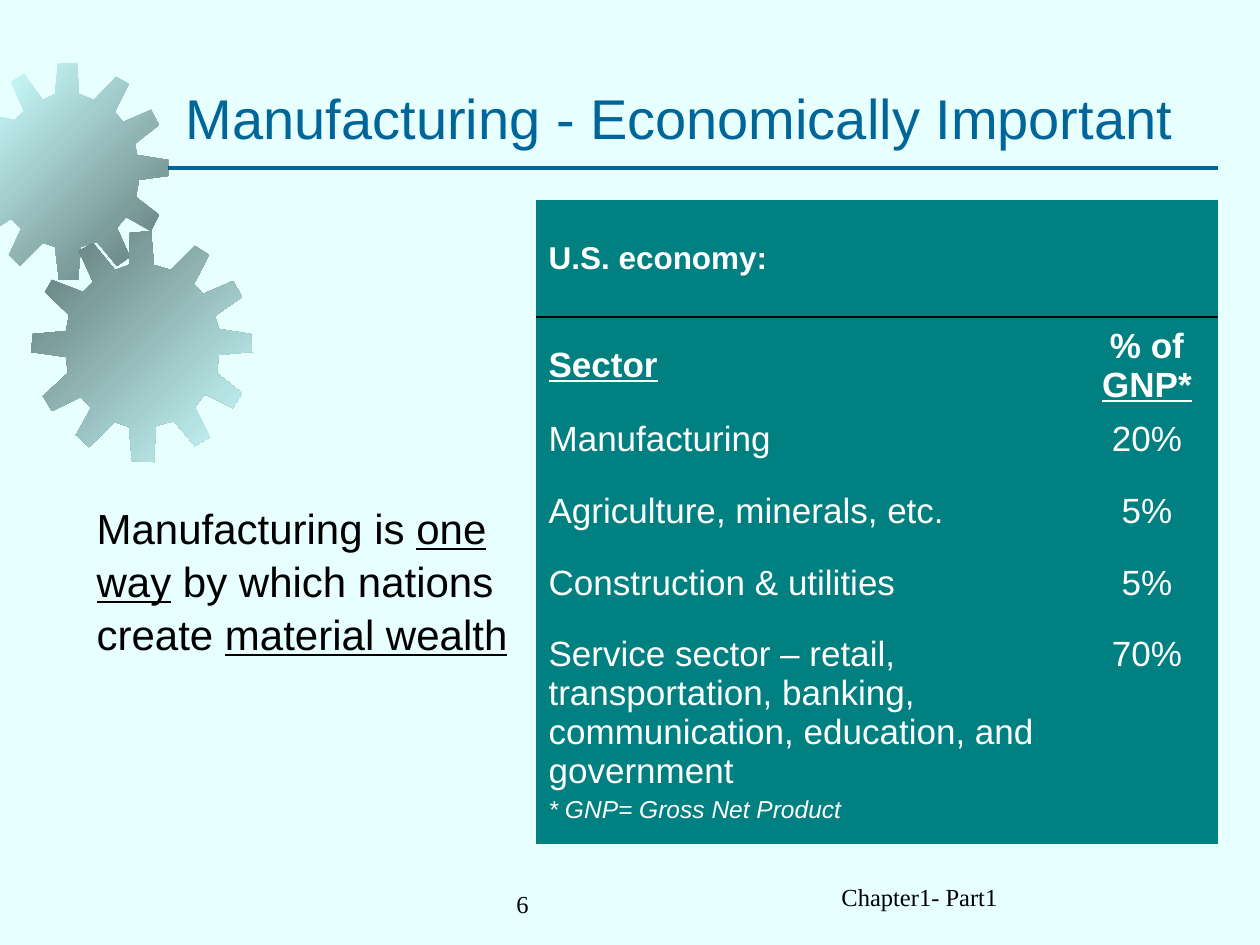
from lxml.etree import SubElement
from pptx import Presentation
from pptx.dml.color import RGBColor
from pptx.enum.shapes import MSO_CONNECTOR
from pptx.enum.text import MSO_ANCHOR, PP_ALIGN
from pptx.oxml import parse_xml
from pptx.oxml.ns import nsdecls, qn
from pptx.util import Emu, Pt

EMU_PER_PX = 914400 / 126
BLUE, TEAL, BLACK, WHITE = "006699", "008080", "000000", "FFFFFF"
GEAR_LIGHT, GEAR_DARK = "CCFFFF", "5E7676"
NO_STYLE_NO_GRID = "{2D5ABB26-0587-4C30-8999-92F81FD0307C}"

UPPER_GEAR = [
    (94, 37), (79, 31), (77, 0), (58, 1), (55, 31), (43, 37), (24, 11), (11, 19),
    (24, 48), (15, 57), (0, 54), (0, 163), (11, 156), (21, 166), (9, 192), (20, 203),
    (43, 180), (55, 184), (59, 217), (78, 217), (81, 184), (97, 179), (117, 203),
    (130, 194), (117, 165), (126, 154), (151, 168), (159, 152), (136, 134), (139, 117),
    (168, 113), (168, 97), (137, 92), (135, 81), (159, 62), (151, 47), (123, 59),
    (115, 49), (129, 21), (116, 14),
]
LOWER_GEAR = [
    (140, 39), (123, 34), (120, 0), (99, 2), (98, 34), (84, 39), (62, 12), (48, 20),
    (62, 51), (52, 61), (21, 49), (14, 61), (38, 84), (35, 100), (2, 103), (0, 121),
    (35, 126), (37, 142), (12, 165), (21, 180), (50, 166), (60, 177), (45, 204),
    (58, 216), (84, 191), (98, 196), (101, 230), (123, 231), (125, 195), (143, 190),
    (164, 215), (179, 206), (164, 176), (174, 163), (202, 177), (211, 162), (186, 142),
    (188, 124), (221, 121), (220, 103), (188, 98), (184, 85), (211, 66), (202, 50),
    (172, 63), (163, 53), (178, 24), (164, 15),
]
SECTORS = [
    ("Manufacturing", "20%"),
    ("Agriculture, minerals, etc.", "5%"),
    ("Construction & utilities", "5%"),
    ("Service sector – retail, transportation, banking, communication, "
     "education, and government", "70%"),
]


def px(length):
    return Emu(round(length * EMU_PER_PX))


def color(hex_string):
    return RGBColor.from_string(hex_string)


def add_run(paragraph, text, size, hex_color, name="Arial", bold=None, italic=None,
            underline=None):
    run = paragraph.add_run()
    run.text = text
    font = run.font
    font.size, font.name = Pt(size), name
    font.bold, font.italic, font.underline = bold, italic, underline
    font.color.rgb = color(hex_color)


def place(shape, left, top, width, height):
    shape.left, shape.top = px(left), px(top)
    shape.width, shape.height = px(width), px(height)


def add_gear(slide, left, top, points, start_color, end_color):
    builder = slide.shapes.build_freeform(*points[0], scale=EMU_PER_PX)
    builder.add_line_segments(points[1:], close=True)
    gear = builder.convert_to_shape(px(left), px(top))
    gear.shadow.inherit = False
    gear.line.fill.background()
    gear.fill.gradient()
    gear.fill.gradient_angle = 315
    for stop, hex_color in zip(gear.fill.gradient_stops, (start_color, end_color)):
        stop.color.rgb = color(hex_color)


def add_rule(slide, left, top, width):
    rule = slide.shapes.add_connector(
        MSO_CONNECTOR.STRAIGHT, px(left), px(top), px(left + width), px(top))
    rule.line.color.rgb = color(BLUE)
    rule.line.width = Pt(2)
    SubElement(rule._element.spPr, qn("a:effectLst"))


def fill_title(slide, left, top, width, height):
    title = slide.shapes.title
    place(title, left, top, width, height)
    title.text_frame.vertical_anchor = MSO_ANCHOR.BOTTOM
    paragraph = title.text_frame.paragraphs[0]
    paragraph.alignment = PP_ALIGN.CENTER
    add_run(paragraph, "Manufacturing - Economically Important ", 32, BLUE)


def fill_body(slide, left, top, width, height):
    body = slide.placeholders[1]
    place(body, left, top, width, height)
    paragraph = body.text_frame.paragraphs[0]
    paragraph.line_spacing = 1.05
    properties = paragraph._p.get_or_add_pPr()
    properties.set("marL", "0")
    properties.set("indent", "0")
    SubElement(properties, qn("a:buNone"))
    for text, underline in [("Manufacturing is ", False), ("one way", True),
                            (" by which nations create ", False),
                            ("material wealth", True)]:
        add_run(paragraph, text, 24, BLACK, underline=underline)


def add_footer_text(slide, left, top, width, height, text):
    box = slide.shapes.add_textbox(px(left), px(top), px(width), px(height))
    box.text_frame.word_wrap = True
    add_run(box.text_frame.paragraphs[0], text, 14, BLACK, name="Times New Roman")


def add_bottom_border(cell):
    cell._tc.get_or_add_tcPr().insert(0, parse_xml(
        f'<a:lnB {nsdecls("a")} w="12700"><a:solidFill><a:srgbClr val="{BLACK}"/>'
        '</a:solidFill></a:lnB>'))


def add_economy_table(slide, left, top, column_widths, row_heights):
    frame = slide.shapes.add_table(
        len(row_heights), len(column_widths), px(left), px(top),
        px(sum(column_widths)), px(sum(row_heights)))
    table = frame.table
    table.first_row = table.horz_banding = False
    table._tbl.tblPr.find(qn("a:tableStyleId")).text = NO_STYLE_NO_GRID
    for column, width in zip(table.columns, column_widths):
        column.width = px(width)
    for row, height in zip(table.rows, row_heights):
        row.height = px(height)
        row.cells[1].text_frame.paragraphs[0].alignment = PP_ALIGN.CENTER
    for cell in table.iter_cells():
        cell.fill.solid()
        cell.fill.fore_color.rgb = color(TEAL)

    def first_paragraph(row, column):
        return table.cell(row, column).text_frame.paragraphs[0]

    for column in range(2):
        add_bottom_border(table.cell(0, column))
        for row in range(2):
            table.cell(row, column).vertical_anchor = MSO_ANCHOR.MIDDLE
    add_run(first_paragraph(0, 0), "U.S. economy:", 18, WHITE, bold=True)
    add_run(first_paragraph(1, 0), "Sector", 20, WHITE, bold=True, underline=True)
    add_run(first_paragraph(1, 1), "% of ", 20, WHITE, bold=True)
    add_run(first_paragraph(1, 1), "GNP*", 20, WHITE, bold=True, underline=True)
    for row, texts in enumerate(SECTORS, start=2):
        for column, text in enumerate(texts):
            add_run(first_paragraph(row, column), text, 20, WHITE)
    footnote = table.cell(len(row_heights) - 1, 0).text_frame.add_paragraph()
    footnote.space_before = Pt(3)
    add_run(footnote, "* GNP= Gross Net Product", 14, WHITE, italic=True)


def main():
    presentation = Presentation()
    presentation.slide_width, presentation.slide_height = px(1260), px(945)
    slide = presentation.slides.add_slide(presentation.slide_layouts[1])
    slide.background.fill.solid()
    slide.background.fill.fore_color.rgb = color("E7FFFF")
    add_gear(slide, 0, 63, UPPER_GEAR, GEAR_LIGHT, GEAR_DARK)
    add_gear(slide, 31, 231, LOWER_GEAR, GEAR_DARK, GEAR_LIGHT)
    add_rule(slide, 168, 168, 1050)
    add_footer_text(slide, 504, 883, 294, 66, "6")
    add_footer_text(slide, 829, 876, 399, 66, "Chapter1- Part1")
    fill_title(slide, 157, 31, 1061, 126)
    fill_body(slide, 84, 494, 462, 262)
    add_economy_table(slide, 536, 200, (540, 142), (117, 78, 72, 72, 71, 146))
    presentation.save("out.pptx")


if __name__ == "__main__":
    main()
